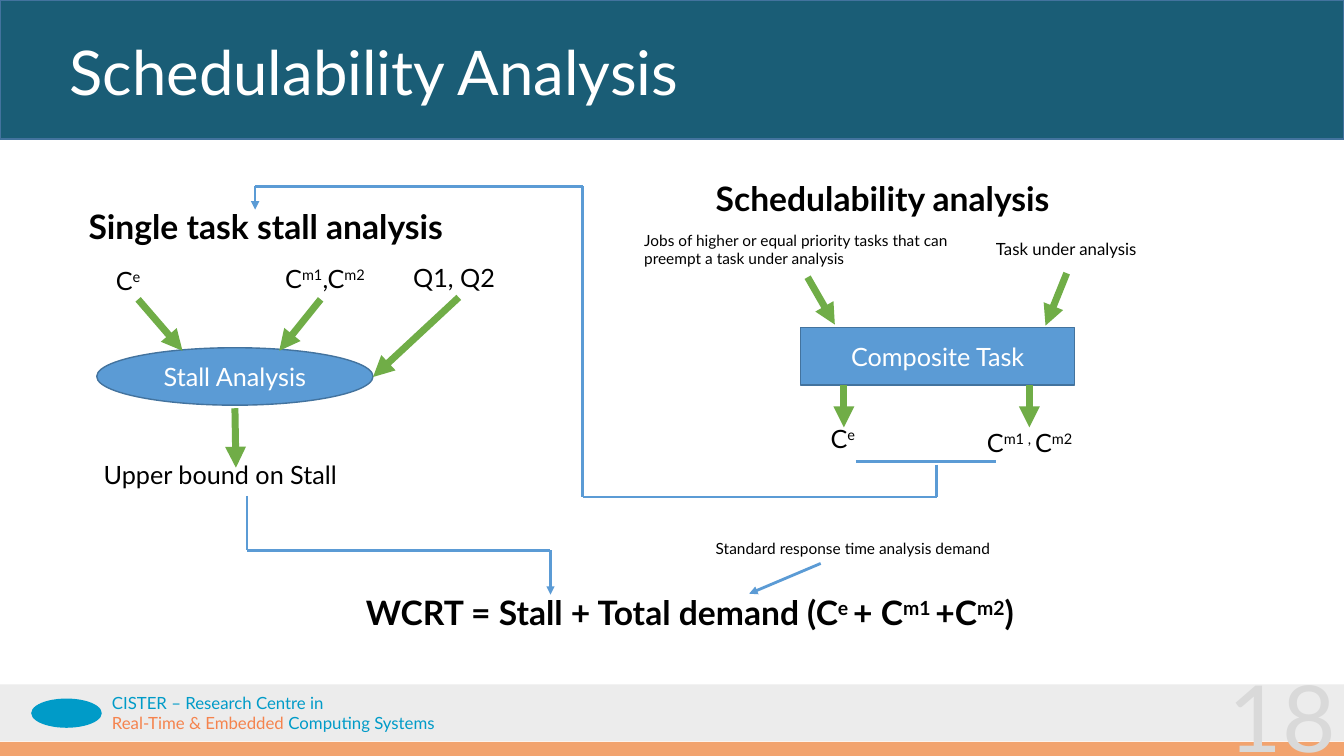
from lxml.etree import SubElement
from pptx import Presentation
from pptx.dml.color import RGBColor
from pptx.enum.shapes import MSO_CONNECTOR, MSO_SHAPE
from pptx.enum.text import MSO_ANCHOR, MSO_AUTO_SIZE, PP_ALIGN
from pptx.oxml.ns import qn
from pptx.util import Pt

PX = 9144  # 100 px to the inch
WIDE, HIGH = 1333, 750
FONT = "Lato"
WHITE = RGBColor(0xFF, 0xFF, 0xFF)
BLACK = RGBColor(0, 0, 0)
PALE = RGBColor(0xEC, 0xEC, 0xEC)
GREY = RGBColor(0xD9, 0xD9, 0xD9)
TEAL = RGBColor(0x1A, 0x5D, 0x76)
BLUE = RGBColor(0x5B, 0x9B, 0xD5)
NAVY = RGBColor(0x43, 0x73, 0x9E)
GREEN = RGBColor(0x70, 0xAD, 0x47)
AMBER = RGBColor(0xED, 0x7D, 0x31)
CYAN = RGBColor(0x00, 0x9B, 0xC8)
CORAL = RGBColor(0xF5, 0x83, 0x4D)


def scale(*sizes):
    return [size * PX for size in sizes]


class Board:
    """One slide and the style of what is put on it."""

    def __init__(self, slide):
        self.slide = slide
        self.shapes = slide.shapes

    def style(self, run, size, color, bold=False):
        font = run.font
        font.name, font.size, font.bold = FONT, Pt(size), bold
        font.color.rgb = color

    def title(self, text, *box):
        head = self.shapes.title
        head.left, head.top, head.width, head.height = scale(*box)
        frame = head.text_frame
        frame.text = text
        frame.auto_size = MSO_AUTO_SIZE.NONE
        frame.vertical_anchor = MSO_ANCHOR.BOTTOM
        para = frame.paragraphs[0]
        para.alignment, para.line_spacing = PP_ALIGN.LEFT, 0.9
        self.style(para.runs[0], 44, WHITE)
        # Bring the title in front of its band
        head._element.getparent().append(head._element)

    def block(self, kind, fill, *box, edge=None, text="", alpha=None):
        shape = self.shapes.add_shape(kind, *scale(*box))
        shape.shadow.inherit = False
        shape.fill.solid()
        shape.fill.fore_color.rgb = fill
        if alpha:
            tint = shape._element.spPr.find(qn("a:solidFill"))[0]
            SubElement(tint, qn("a:alpha")).set("val", str(alpha * 1000))
        if edge is None:
            shape.line.fill.background()
        else:
            shape.line.color.rgb = edge
            shape.line.width = Pt(1)
        if text:
            frame = shape.text_frame
            frame.text = text
            frame.vertical_anchor = MSO_ANCHOR.MIDDLE
            para = frame.paragraphs[0]
            para.alignment = PP_ALIGN.CENTER
            self.style(para.runs[0], 18, WHITE)
        return shape

    def label(self, text, size, *box, color=BLACK, bold=False, accent=None,
              align=PP_ALIGN.LEFT, inset=True):
        """Every second piece between bars is raised, or takes the accent."""
        frame = self.shapes.add_textbox(*scale(*box)).text_frame
        frame.word_wrap = True
        if not inset:
            frame.margin_left = frame.margin_right = 0
            frame.margin_top = frame.margin_bottom = 0
        for row, line in enumerate(text.split("\n")):
            para = frame.add_paragraph() if row else frame.paragraphs[0]
            para.alignment = align
            for spot, piece in enumerate(line.split("|")):
                if not piece:
                    continue
                run = para.add_run()
                run.text = piece
                odd = spot % 2 == 1
                self.style(run, size, accent if odd and accent else color, bold)
                if odd and not accent:
                    run.font._element.set("baseline", "30000")

    def line(self, start, end, color=BLUE, width=2, arrow=False):
        link = self.shapes.add_connector(
            MSO_CONNECTOR.STRAIGHT, *scale(*start, *end))
        link.line.color.rgb = color
        link.line.width = Pt(width)
        if arrow:
            SubElement(link.get_or_add_ln(), qn("a:tailEnd")).set(
                "type", "triangle")
        SubElement(link._element.spPr, qn("a:effectLst"))

    def arrow(self, start, end):
        self.line(start, end, GREEN, 5, True)

    def route(self, *points):
        """Draw straight legs with an arrowhead on the last."""
        last = len(points) - 2
        for leg, (start, end) in enumerate(zip(points, points[1:])):
            self.line(start, end, arrow=leg == last)


def frame_slide(board):
    rect = MSO_SHAPE.RECTANGLE
    board.block(rect, PALE, 0, 679, WIDE, 56)
    board.block(rect, TEAL, 0, 0, WIDE, 138, edge=NAVY)
    board.block(rect, AMBER, 0, 736, WIDE, 16, alpha=70)
    board.block(MSO_SHAPE.OVAL, CYAN, 31, 693, 70, 29)
    board.label("CISTER – Research Centre in\n"
                "|Real-Time & Embedded |Computing Systems",
                12, 111, 687, 328, 40, color=CYAN, accent=CORAL, inset=False)
    board.title("Schedulability Analysis", 59, 24, 1150, 89)
    board.label("18", 66, 1187, 650, 148, 107, color=GREY,
                align=PP_ALIGN.RIGHT)


def draw_stall(board):
    board.label("Single task stall analysis", 24, 78, 199, 400, 50, bold=True)
    board.block(MSO_SHAPE.OVAL, BLUE, 96, 345, 274, 57, edge=NAVY,
                text="Stall Analysis")
    board.label("C|e", 18, 105, 258, 54, 43)
    board.label("C|m1|,C|m2", 18, 273, 256, 115, 40)
    board.label("Q1, Q2", 18, 400, 255, 110, 40)
    board.label("Upper bound on Stall", 18, 93, 451, 304, 43)
    board.arrow((137, 297), (181, 348))
    board.arrow((318, 297), (277, 348))
    board.arrow((455, 295), (370, 374))
    board.arrow((233, 405), (234, 464))


def draw_sched(board):
    board.label("Schedulability analysis", 24, 700, 172, 468, 54, bold=True)
    board.block(MSO_SHAPE.RECTANGLE, BLUE, 794, 325, 272, 57, edge=NAVY,
                text="Composite Task")
    board.label("Jobs of higher or equal priority tasks that can preempt "
                "a task under analysis", 11, 629, 224, 338, 50)
    board.label("Task under analysis", 12, 978, 232, 193, 32)
    board.label("C|e", 18, 814, 415, 54, 43)
    board.label("C|m1 , |C|m2", 18, 969, 419, 125, 40)
    board.arrow((801, 275), (828, 322))
    board.arrow((1058, 271), (1037, 323))
    for x in (837, 1021):
        board.arrow((x, 382), (x, 424))


def draw_result(board):
    board.label("WCRT = Stall + Total demand (C|e |+ C|m1 |+C|m2|)",
                24, 353, 582, 758, 50, bold=True)
    board.label("Standard response time analysis demand",
                11, 700, 530, 352, 30)
    board.line((849, 458), (988, 458))
    board.route((929, 461), (929, 493), (578, 493), (578, 185),
                (253, 185), (253, 208))
    board.route((245, 492), (245, 546), (546, 546), (546, 590))
    board.route((814, 559), (743, 589))


def main():
    deck = Presentation()
    deck.slide_width, deck.slide_height = scale(WIDE, HIGH)
    board = Board(deck.slides.add_slide(deck.slide_layouts[5]))
    frame_slide(board)
    draw_stall(board)
    draw_sched(board)
    draw_result(board)
    deck.save("out.pptx")


if __name__ == "__main__":
    main()
